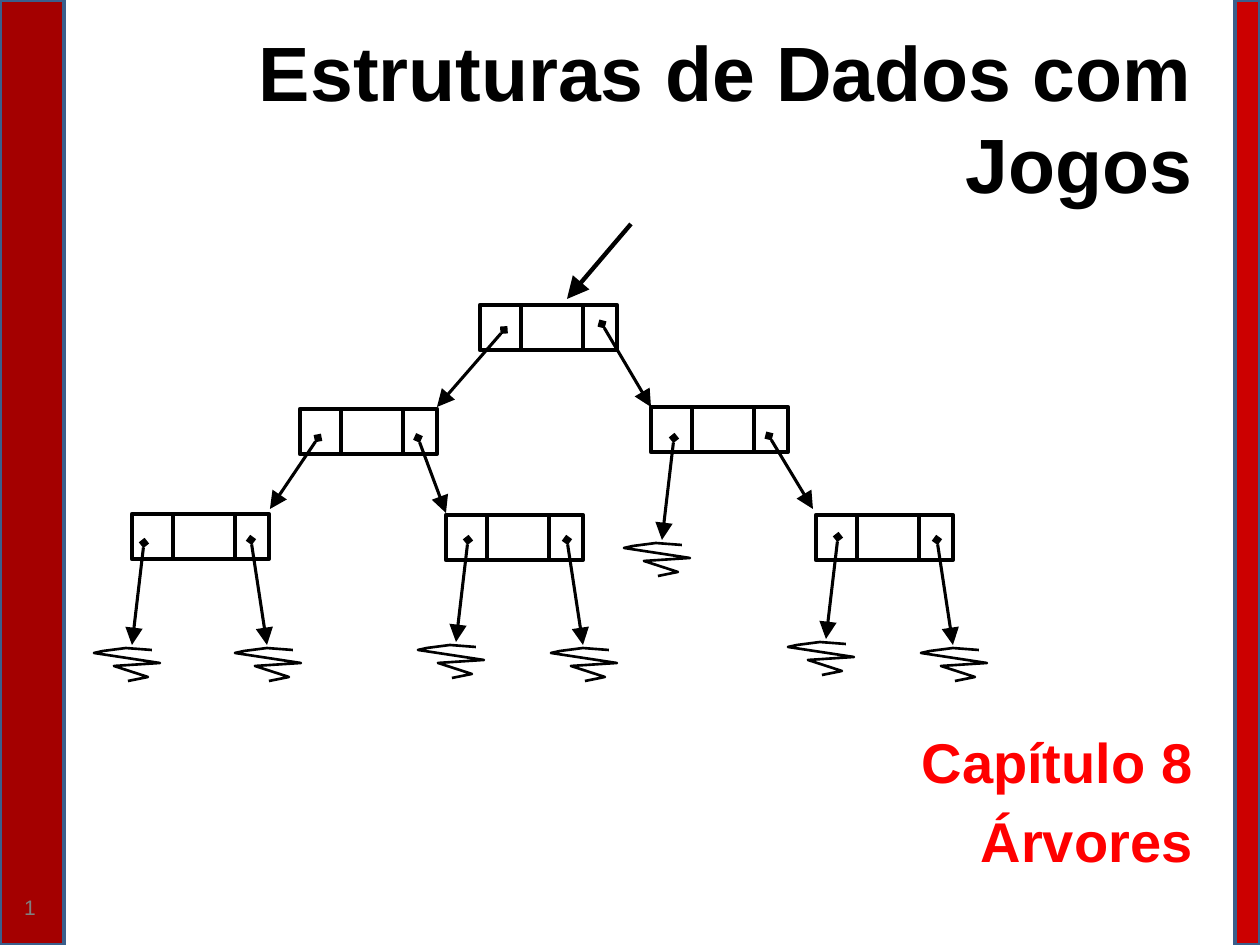
from lxml.etree import SubElement
from pptx import Presentation
from pptx.dml.color import RGBColor
from pptx.enum.shapes import MSO_CONNECTOR, MSO_SHAPE
from pptx.enum.text import MSO_ANCHOR, PP_ALIGN
from pptx.oxml.ns import qn
from pptx.util import Pt

PX = 914400 // 126
BLACK = "000000"

# Tree nodes: left, top
NODES = [(480, 305), (300, 409), (651, 407), (132, 514), (446, 515), (816, 515)]
NODE_W, NODE_H = 137, 45
KEY_X, KEY_W = 41, 62

# Links between nodes: start, end
LINKS = [
    ((504, 330), (437, 407)), ((602, 324), (651, 407)),
    ((318, 438), (270, 509)), ((418, 438), (446, 513)),
    ((769, 436), (813, 509)),
]

# Null links: start of the pointer
LEFT_NULLS = [(674, 438), (144, 543), (468, 540), (838, 537)]
RIGHT_NULLS = [(251, 540), (567, 540), (937, 540)]

# Corners of the scribble for null
NULL_POINTS = [(34, 33), (54, 29), (20, 18), (66, 15),
               (0, 5), (9, 3), (32, 0), (58, 2)]


def px(n):
    return n * PX


def color(hex_text):
    return RGBColor.from_string(hex_text)


def set_line(s, hex_text, width):
    s.line.color.rgb = color(hex_text)
    s.line.width = Pt(width)


def add_rect(slide, x, y, w, h, line, width, fill=None):
    s = slide.shapes.add_shape(MSO_SHAPE.RECTANGLE, px(x), px(y), px(w), px(h))
    s.shadow.inherit = False
    if fill:
        s.fill.solid()
        s.fill.fore_color.rgb = color(fill)
    else:
        s.fill.background()
    set_line(s, line, width)


def add_text(slide, box, lines, size, hex_text, align, bold=False,
             anchor=MSO_ANCHOR.TOP, space=0):
    tf = slide.shapes.add_textbox(*map(px, box)).text_frame
    tf.word_wrap = True
    tf.vertical_anchor = anchor
    for i, text in enumerate(lines):
        p = tf.add_paragraph() if i else tf.paragraphs[0]
        p.alignment = align
        p.space_before = Pt(space)
        r = p.add_run()
        r.text = text
        r.font.name = "Arial"
        r.font.size = Pt(size)
        r.font.bold = bold
        r.font.color.rgb = color(hex_text)


def add_arrow(slide, start, end, width=1.75, diamond=True):
    s = slide.shapes.add_connector(MSO_CONNECTOR.STRAIGHT, *map(px, start + end))
    set_line(s, BLACK, width)
    ln = s.line._get_or_add_ln()
    if diamond:
        SubElement(ln, qn("a:headEnd"), type="diamond")
    SubElement(ln, qn("a:tailEnd"), type="triangle", w="lg", len="lg")
    SubElement(s._element.spPr, qn("a:effectLst"))


def add_node(slide, x, y):
    add_rect(slide, x + KEY_X, y, KEY_W, NODE_H, BLACK, 2.5)
    add_rect(slide, x, y, NODE_W, NODE_H, BLACK, 2.5)


def add_null(slide, x, y):
    path = [(px(x + a), px(y + b)) for a, b in NULL_POINTS]
    builder = slide.shapes.build_freeform(*path[0])
    builder.add_line_segments(path[1:], close=False)
    s = builder.convert_to_shape()
    s.shadow.inherit = False
    s.fill.background()
    set_line(s, BLACK, 1.5)


def add_null_link(slide, start, dx, dy, null_dx):
    x, y = start[0] + dx, start[1] + dy
    add_null(slide, x - null_dx, y + 3)
    add_arrow(slide, start, (x, y))


def main():
    prs = Presentation()
    prs.slide_width, prs.slide_height = px(1260), px(945)
    slide = prs.slides.add_slide(prs.slide_layouts[6])

    # Side bands and page number
    add_rect(slide, 0, 0, 64, 945, "3A5F8C", 2, "A40000")
    add_rect(slide, 1235, 0, 25, 945, "3A5F8C", 2, "CC0000")
    add_text(slide, (4, 888, 52, 50), ["1"], 12, "808080", PP_ALIGN.CENTER)

    # Title and chapter
    add_text(slide, (95, 15, 1110, 203), ["Estruturas de Dados com Jogos"], 44,
             BLACK, PP_ALIGN.RIGHT, True, MSO_ANCHOR.MIDDLE)
    add_text(slide, (114, 721, 1091, 218), ["Capítulo 8", "Árvores"], 32,
             "FF0000", PP_ALIGN.RIGHT, True, space=7)

    # Binary tree
    for x, y in NODES:
        add_node(slide, x, y)
    for start, end in LINKS:
        add_arrow(slide, start, end)
    add_arrow(slide, (631, 224), (567, 299), 2.5, diamond=False)

    # Null links
    for start in LEFT_NULLS:
        add_null_link(slide, start, -12, 102, 38)
    for start in RIGHT_NULLS:
        add_null_link(slide, start, 16, 105, 32)

    prs.save("out.pptx")


if __name__ == "__main__":
    main()
